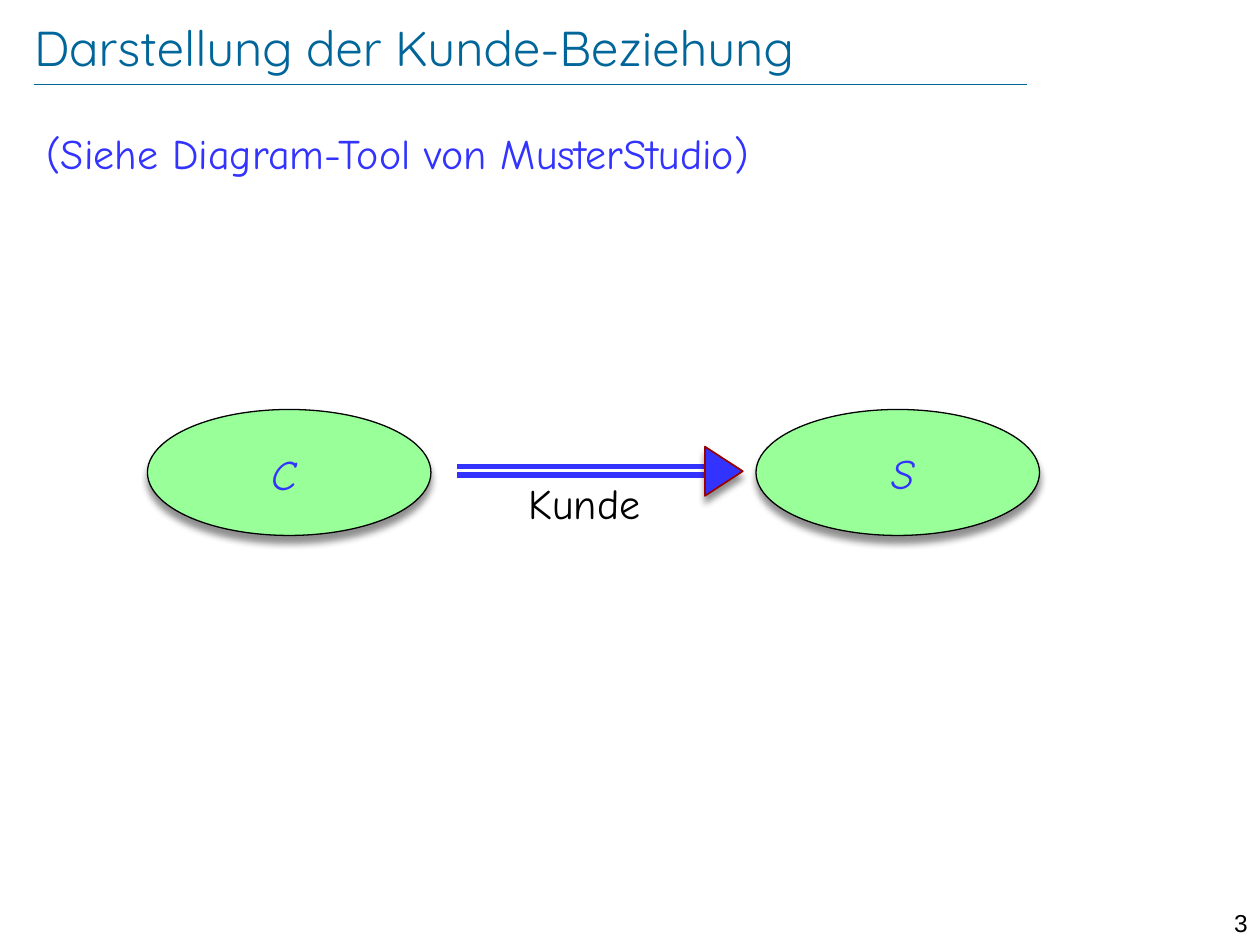
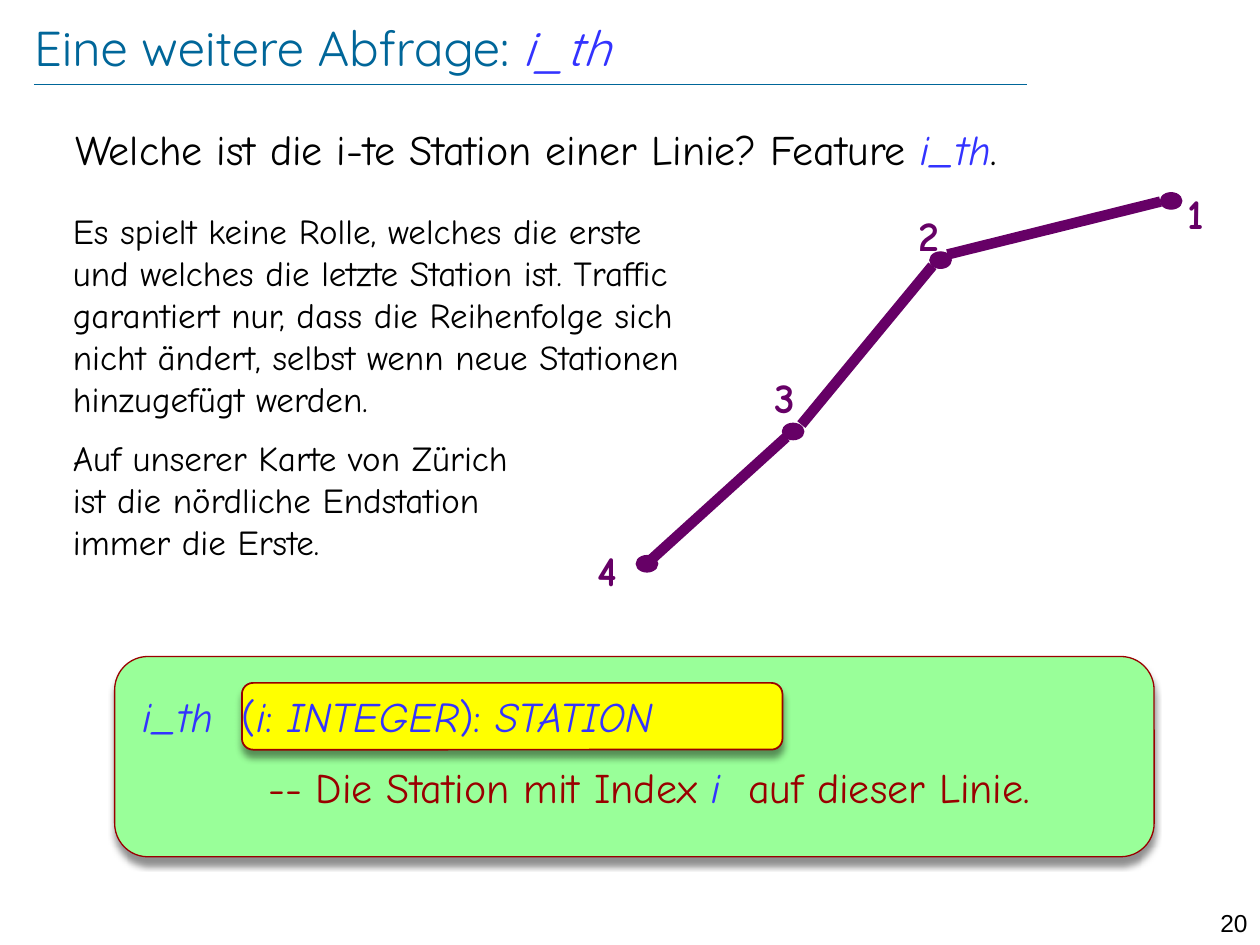
"""Two lecture slides: the client relation diagram and the query i_th."""
from lxml import etree
from pptx import Presentation
from pptx.dml.color import RGBColor
from pptx.enum.shapes import MSO_CONNECTOR, MSO_SHAPE
from pptx.enum.text import MSO_ANCHOR, PP_ALIGN
from pptx.oxml import parse_xml
from pptx.oxml.ns import nsdecls, qn
from pptx.util import Pt

PX = 9144
LINE = MSO_CONNECTOR.STRAIGHT
OVAL, ROUND, TRIANGLE = MSO_SHAPE.OVAL, MSO_SHAPE.ROUNDED_RECTANGLE, MSO_SHAPE.ISOSCELES_TRIANGLE
LEFT, CENTER, RIGHT = PP_ALIGN.LEFT, PP_ALIGN.CENTER, PP_ALIGN.RIGHT
TOP, MIDDLE = MSO_ANCHOR.TOP, MSO_ANCHOR.MIDDLE

COLORS = {
    "title": "006699", "blue": "3333FF", "black": "000000", "green": "99FF99",
    "red": "990000", "purple": "660066", "yellow": "FFFF00",
}
TITLE = {"name": "Quicksand", "size": Pt(28)}
BODY = {"name": "Comic Neue", "size": Pt(24)}
STYLES = {
    "title": ("title", TITLE),
    "title code": ("blue", TITLE | {"italic": True}),
    "number": ("black", {"name": "Arial", "size": Pt(14)}),
    "body": ("black", BODY),
    "small": ("black", BODY | {"size": Pt(20)}),
    "blue": ("blue", BODY),
    "code": ("blue", BODY | {"italic": True}),
    "comment": ("red", BODY),
    "station": ("purple", BODY | {"bold": True}),
}
SHADOW = (
    f'<a:effectLst {nsdecls("a")}><a:outerShdw blurRad="50800" dist="50800" dir="5400000"'
    ' rotWithShape="0"><a:srgbClr val="000000"><a:alpha val="43000"/></a:srgbClr>'
    "</a:outerShdw></a:effectLst>"
)


def add_text(s, box, paras, align=LEFT, anchor=TOP, inset=(10, 5), gap=0, tabs=()):
    """Add a text box whose paragraphs are lists of (text, style) runs."""
    tf = s.shapes.add_textbox(*(v * PX for v in box)).text_frame
    tf.word_wrap = True
    tf.vertical_anchor = anchor
    tf.margin_left = tf.margin_right = inset[0] * PX
    tf.margin_top = tf.margin_bottom = inset[1] * PX
    for i, runs in enumerate(paras):
        p = tf.paragraphs[0] if i == 0 else tf.add_paragraph()
        p.alignment = align
        if i:
            p.space_before = Pt(gap)
        if tabs:
            tab_list = etree.SubElement(p._p.get_or_add_pPr(), qn("a:tabLst"))
            etree.SubElement(tab_list, qn("a:tab"), pos=str(tabs[i] * PX), algn="l")
        for text, style in runs:
            color, font = STYLES[style]
            for j, part in enumerate(text.split("\n")):
                if j:
                    p.add_line_break()
                r = p.add_run()
                r.text = part
                for name, value in font.items():
                    setattr(r.font, name, value)
                r.font.color.rgb = RGBColor.from_string(COLORS[color])


def add_shape(s, kind, box, fill, line, width=0.75, shadow=True):
    """Add a filled preset shape, with a soft shadow below it if wanted."""
    sp = s.shapes.add_shape(kind, *(v * PX for v in box))
    sp.fill.solid()
    sp.fill.fore_color.rgb = RGBColor.from_string(COLORS[fill])
    sp.line.color.rgb = RGBColor.from_string(COLORS[line])
    sp.line.width = Pt(width)
    if shadow:
        sp._element.spPr.append(parse_xml(SHADOW))
    else:
        sp.shadow.inherit = False
    return sp


prs = Presentation()
prs.slide_width, prs.slide_height = 1000 * PX, 750 * PX

RULE = (27, 67, 815, 67, "title", 0.25)
ARROW = [(363, y, 560, y, "blue", 3) for y in (370, 377)]
ROUTE = [
    (*ends, "purple", 6)
    for ends in ((517, 444, 624, 347), (636, 337, 740, 211), (752, 202, 921, 160))
]
FRAMES = [
    ("3", [("Darstellung der Kunde-Beziehung", "title")], ARROW),
    ("20", [("Eine weitere Abfrage: ", "title"), ("i_th", "title code")], ROUTE),
]
slides = []
for number, title, lines in FRAMES:
    s = prs.slides.add_slide(prs.slide_layouts[6])
    slides.append(s)
    add_text(s, (27, 13, 869, 48), [title], anchor=MIDDLE, inset=(0, 0))
    add_text(s, (945, 716, 55, 24), [[(number, "number")]], align=RIGHT)
    for x1, y1, x2, y2, color, width in [RULE, *lines]:
        c = s.shapes.add_connector(LINE, x1 * PX, y1 * PX, x2 * PX, y2 * PX)
        c.line.color.rgb = RGBColor.from_string(COLORS[color])
        c.line.width = Pt(width)
        etree.SubElement(c._element.spPr, qn("a:effectLst"))
client, query = slides

add_text(client, (27, 96, 940, 617), [[("(Siehe Diagram-Tool von MusterStudio)", "blue")]])
for name, x, text_x, text_y in (("C", 117, 117, 351), ("S", 600, 608, 350)):
    add_shape(client, OVAL, (x, 325, 225, 100), "green", "black")
    add_text(client, (text_x, text_y, 217, 50), [[(name, "code")]], align=CENTER)
head = add_shape(client, TRIANGLE, (555, 359, 39, 30), "blue", "red", 1)
head.rotation = 90
add_text(client, (410, 374, 113, 50), [[("Kunde", "body")]])

add_text(query, (50, 93, 921, 52), [[
    ("Welche ist die i-te Station einer Linie? Feature ", "body"),
    ("i_th", "code"),
    (".", "body"),
]])
add_text(query, (48, 161, 508, 330), [
    [("Es spielt keine Rolle, welches die erste und welches die letzte Station ist. "
      "Traffic garantiert nur, dass die Reihenfolge sich nicht ändert, "
      "selbst wenn neue Stationen hinzugefügt werden.", "small")],
    [("Auf unserer Karte von Zürich\nist die nördliche Endstation\nimmer die Erste.", "small")],
], gap=10)

STATIONS = [
    ("1", 921, 153, 933, 144),
    ("2", 738, 200, 719, 161),
    ("3", 621, 336, 605, 290),
    ("4", 505, 441, 464, 427),
]
for label, x, y, label_x, label_y in STATIONS:
    add_shape(query, OVAL, (x, y, 17, 13), "purple", "purple", shadow=False)
    add_text(query, (label_x, label_y, 41, 51), [[(label, "station")]])

add_shape(query, ROUND, (91, 521, 825, 159), "green", "red")
add_shape(query, ROUND, (192, 542, 429, 53), "yellow", "red", 1)
add_text(query, (103, 543, 794, 111), [
    [("i_th\t", "code"), ("(", "blue"), ("i", "code"), (": ", "blue"),
     ("INTEGER", "code"), ("): ", "blue"), ("STATION", "code")],
    [("\t-- Die Station mit Index ", "comment"), ("i ", "code"),
     (" auf dieser Linie.", "comment")],
], gap=12, tabs=(79, 100))

prs.save("out.pptx")
